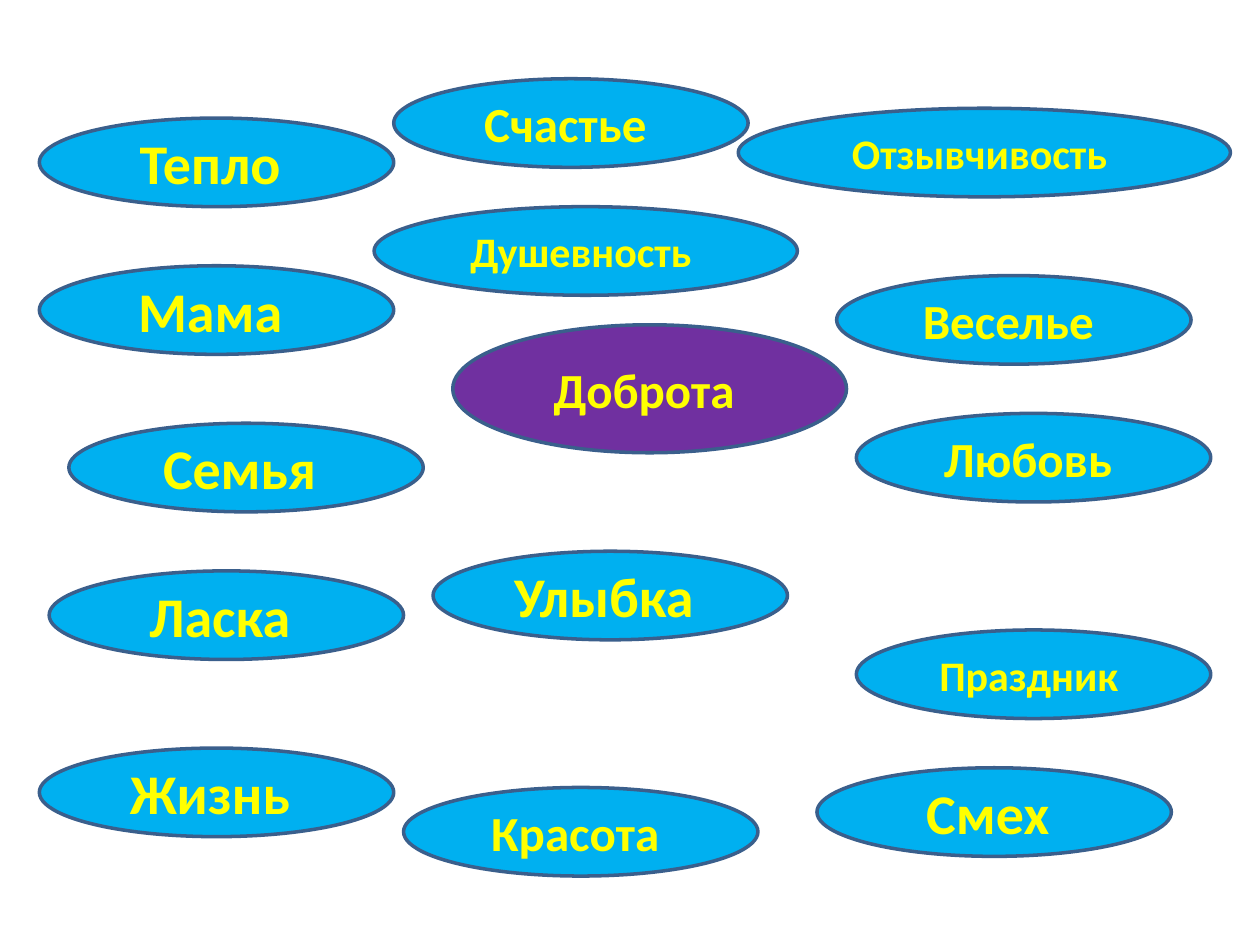
from dataclasses import dataclass

from pptx import Presentation
from pptx.dml.color import RGBColor
from pptx.enum.shapes import MSO_SHAPE
from pptx.enum.text import MSO_ANCHOR, PP_ALIGN
from pptx.util import Inches, Pt


@dataclass(frozen=True)
class Theme:
    font: str = "Calibri"
    text: RGBColor = RGBColor(0xFF, 0xFF, 0x00)
    center: RGBColor = RGBColor(0x70, 0x30, 0xA0)
    word: RGBColor = RGBColor(0x00, 0xB0, 0xF0)
    outline: RGBColor = RGBColor(0x3A, 0x5F, 0x8C)
    outline_width: Pt = Pt(2)
    large: Pt = Pt(32)
    medium: Pt = Pt(28)
    small: Pt = Pt(24)


THEME = Theme()
COLUMNS = 128  # square grid cells across the slide width
WORD_COLUMNS, WORD_ROWS = 36, 9

# Word, left column, top row, type size
CENTER = ("Доброта ", 46, 33, THEME.medium)
WORDS = [
    ("Счастье ", 40, 8, THEME.medium),
    ("Семья ", 7, 43, THEME.large),
    ("Ласка ", 5, 58, THEME.large),
    ("Улыбка ", 44, 56, THEME.large),
    ("Красота ", 41, 80, THEME.medium),
    ("Смех ", 83, 78, THEME.large),
    ("Любовь ", 87, 42, THEME.medium),
    ("Веселье ", 85, 28, THEME.medium),
    ("Праздник ", 87, 64, THEME.small),
    ("Отзывчивость ", 75, 11, THEME.small),
    ("Душевность ", 38, 21, THEME.small),
    ("Тепло ", 4, 12, THEME.large),
    ("Мама ", 4, 27, THEME.large),
    ("Жизнь ", 4, 76, THEME.large),
]
WIDE_WORDS = {"Отзывчивость ": 50, "Душевность ": 43}

presentation = Presentation()
presentation.slide_width = Inches(10)
presentation.slide_height = Inches(7.5)
slide = presentation.slides.add_slide(presentation.slide_layouts[6])
cell = presentation.slide_width / COLUMNS


def add_bubble(word, column, row, size, columns=WORD_COLUMNS, rows=WORD_ROWS,
               color=THEME.word):
    bounds = [round(n * cell) for n in (column, row, columns, rows)]
    bubble = slide.shapes.add_shape(MSO_SHAPE.OVAL, *bounds)
    bubble.shadow.inherit = False
    bubble.fill.solid()
    bubble.fill.fore_color.rgb = color
    bubble.line.color.rgb = THEME.outline
    bubble.line.width = THEME.outline_width

    frame = bubble.text_frame
    frame.word_wrap = True
    frame.vertical_anchor = MSO_ANCHOR.MIDDLE
    paragraph = frame.paragraphs[0]
    paragraph.alignment = PP_ALIGN.CENTER
    run = paragraph.add_run()
    run.text = word
    run.font.name = THEME.font
    run.font.size = size
    run.font.bold = True
    run.font.color.rgb = THEME.text


add_bubble(*CENTER, columns=40, rows=13, color=THEME.center)
for word, column, row, size in WORDS:
    add_bubble(word, column, row, size, WIDE_WORDS.get(word, WORD_COLUMNS))

presentation.save("out.pptx")
